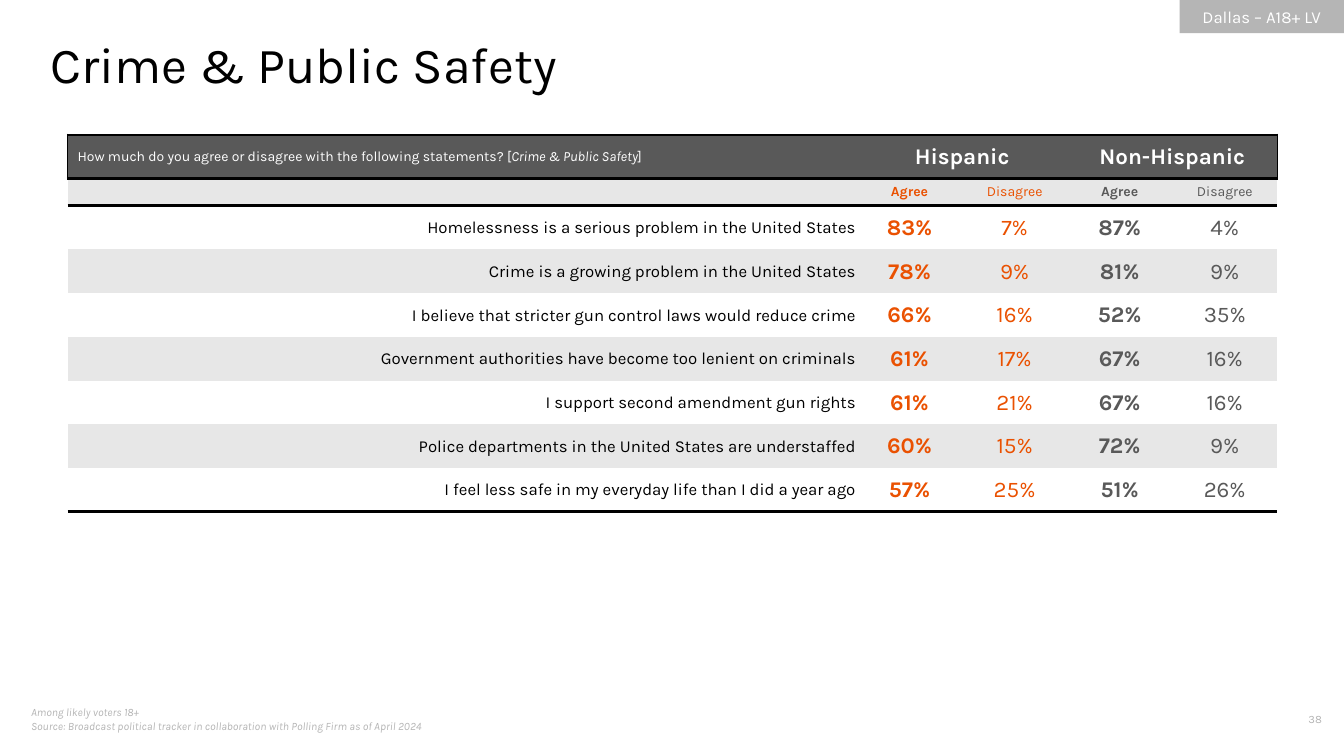
import dataclasses

import lxml.etree
import pptx
import pptx.dml.color
import pptx.enum.shapes
import pptx.enum.text
import pptx.oxml.ns
import pptx.util

Inches = pptx.util.Inches
Pt = pptx.util.Pt
ALIGN = pptx.enum.text.PP_ALIGN
MIDDLE = pptx.enum.text.MSO_ANCHOR.MIDDLE
qn = pptx.oxml.ns.qn


@dataclasses.dataclass(frozen=True)
class Theme:
    font: str = "Karla"
    black: str = "000000"
    white: str = "FFFFFF"
    dark: str = "595959"
    muted: str = "B5B5B5"
    band: str = "E7E7E7"
    accent: str = "EA5101"
    title_size: int = 36
    value_size: int = 16
    label_size: int = 12
    small_size: int = 10
    footer_size: int = 8
    heavy_rule: float = 2.25
    thin_rule: float = 1


THEME = Theme()
NO_TABLE_STYLE = "{2D5ABB26-0587-4C30-8999-92F81FD0307C}"

QUESTION = (
    ("How much do you agree or disagree with the following statements? [", False),
    ("Crime & Public Safety", True),
    ("]", False),
)
GROUPS = ("Hispanic", "Non-Hispanic")
ANSWERS = ("Agree", "Disagree") * 2
STATEMENTS = (
    ("Homelessness is a serious problem in the United States", 83, 7, 87, 4),
    ("Crime is a growing problem in the United States", 78, 9, 81, 9),
    ("I believe that stricter gun control laws would reduce crime", 66, 16, 52, 35),
    ("Government authorities have become too lenient on criminals", 61, 17, 67, 16),
    ("I support second amendment gun rights", 61, 21, 67, 16),
    ("Police departments in the United States are understaffed", 60, 15, 72, 9),
    ("I feel less safe in my everyday life than I did a year ago", 57, 25, 51, 26),
)


def rgb(color):
    return pptx.dml.color.RGBColor.from_string(color)


def style_paragraph(paragraph, size, color, align=ALIGN.LEFT, bold=False, italic=False):
    paragraph.alignment = align
    font = paragraph.font
    font.name = THEME.font
    font.size = Pt(size)
    font.color.rgb = rgb(color)
    font.bold = bold
    font.italic = italic


def add_text(slide, box, text, size, color, margin=None, **style):
    shape = slide.shapes.add_textbox(*map(Inches, box))
    frame = shape.text_frame
    frame.word_wrap = True
    if margin is not None:
        frame.margin_left = frame.margin_right = Inches(margin)
        frame.margin_top = frame.margin_bottom = Inches(margin)
    frame.text = text
    style_paragraph(frame.paragraphs[0], size, color, **style)


def add_audience_tag(slide, box):
    shape = slide.shapes.add_shape(
        pptx.enum.shapes.MSO_SHAPE.RECTANGLE, *map(Inches, box))
    shape.shadow.inherit = False
    shape.fill.solid()
    shape.fill.fore_color.rgb = rgb(THEME.muted)
    shape.line.fill.background()
    frame = shape.text_frame
    frame.vertical_anchor = MIDDLE
    frame.text = "Dallas – A18+ LV"
    style_paragraph(frame.paragraphs[0], THEME.label_size, THEME.white, ALIGN.CENTER)


def set_borders(cell, **widths):
    """Draw black borders; widths are points keyed by side L, R, T or B."""
    properties = cell._tc.get_or_add_tcPr()
    sides = [side for side in "LRTB" if side in widths]
    for position, side in enumerate(sides):
        line = lxml.etree.Element(qn(f"a:ln{side}"), w=str(Pt(widths[side])))
        fill = lxml.etree.SubElement(line, qn("a:solidFill"))
        lxml.etree.SubElement(fill, qn("a:srgbClr"), val=THEME.black)
        properties.insert(position, line)


def fill_cell(cell, text, fill, size, color, **style):
    cell.fill.solid()
    cell.fill.fore_color.rgb = rgb(fill)
    cell.vertical_anchor = MIDDLE
    cell.text = text
    paragraph = cell.text_frame.paragraphs[0]
    style_paragraph(paragraph, size, color, **style)
    if not text:
        lxml.etree.SubElement(paragraph._p, qn("a:endParaRPr"), sz=str(size * 100))


def answer_style(column):
    """Colour by group, with the Agree column of each group in bold."""
    return {
        "color": THEME.accent if column <= 2 else THEME.dark,
        "bold": column % 2 == 1,
        "align": ALIGN.CENTER,
    }


def fill_group_header(table):
    rule = THEME.heavy_rule
    for column in range(5):
        cell = table.cell(0, column)
        group = GROUPS[column // 2] if column in (1, 3) else ""
        fill_cell(cell, group, THEME.dark, THEME.value_size, THEME.white,
                  align=ALIGN.CENTER, bold=True)
        sides = {"T": rule, "B": rule}
        if column == 0:
            sides["L"] = THEME.thin_rule
        if column >= 3:
            sides["R"] = THEME.thin_rule if column == 4 else 0
        set_borders(cell, **{side: width for side, width in sides.items() if width})
    for column in (1, 3):
        table.cell(0, column).merge(table.cell(0, column + 1))
    set_borders(table.cell(0, 3), R=THEME.thin_rule)

    question = table.cell(0, 0)
    fill_cell(question, "", THEME.dark, THEME.small_size, THEME.white)
    paragraph = question.text_frame.paragraphs[0]
    paragraph._p.remove(paragraph._p.find(qn("a:endParaRPr")))
    for text, italic in QUESTION:
        run = paragraph.add_run()
        run.text = text
        run.font.italic = italic


def fill_answer_header(table):
    for column, answer in enumerate(("",) + ANSWERS):
        cell = table.cell(1, column)
        fill_cell(cell, answer, THEME.band, THEME.small_size, **answer_style(column))
        set_borders(cell, T=THEME.heavy_rule)


def fill_statement(table, row, statement, values):
    fill = THEME.band if row % 2 else THEME.white
    fill_cell(table.cell(row, 0), statement, fill, THEME.label_size, THEME.black,
              align=ALIGN.RIGHT)
    for column, value in enumerate(values, 1):
        fill_cell(table.cell(row, column), f"{value}%", fill, THEME.value_size,
                  **answer_style(column))
    for cell in table.rows[row].cells:
        cell.margin_left = cell.margin_right = cell.margin_top = Inches(0.01)
        cell.margin_bottom = 0


def add_survey_table(slide, box):
    width, height = box[2:]
    statement_width, answer_row_height = 7.83, 0.25
    row_count = len(STATEMENTS) + 2
    table_frame = slide.shapes.add_table(row_count, 5, *map(Inches, box))
    table = table_frame.table
    table.first_row = table.horz_banding = False
    table._tbl.tblPr.find(qn("a:tableStyleId")).text = NO_TABLE_STYLE
    for index, column in enumerate(table.columns):
        column.width = Inches((width - statement_width) / 4 if index else statement_width)
    for index, row in enumerate(table.rows):
        row.height = Inches(answer_row_height if index == 1
                            else (height - answer_row_height) / (row_count - 1))
    fill_group_header(table)
    fill_answer_header(table)
    for row, (statement, *values) in enumerate(STATEMENTS, 2):
        fill_statement(table, row, statement, values)
    for cell in table.rows[row_count - 1].cells:
        set_borders(cell, B=THEME.heavy_rule)


def add_footer(slide, box):
    left, top, width, height = box
    add_text(slide, (left, top, 5.11, height),
             "Among likely voters 18+\vSource: Broadcast political tracker in "
             "collaboration with Polling Firm as of April 2024",
             THEME.footer_size, THEME.muted, italic=True)
    add_text(slide, (left + width - 0.88, top + 0.07, 0.88, 0.27), "38",
             THEME.footer_size, THEME.muted, align=ALIGN.RIGHT)


def main():
    presentation = pptx.Presentation()
    presentation.slide_width = Inches(13.33)
    presentation.slide_height = Inches(7.5)
    slide = presentation.slides.add_slide(presentation.slide_layouts[6])
    add_audience_tag(slide, (11.7, 0, 1.63, 0.33))
    add_footer(slide, (0.21, 6.95, 13, 0.4))
    add_text(slide, (0.5, 0.33, 12, 0.61), "Crime & Public Safety",
             THEME.title_size, THEME.black, margin=0)
    add_survey_table(slide, (0.67, 1.34, 12, 3.72))
    presentation.save("out.pptx")


if __name__ == "__main__":
    main()
